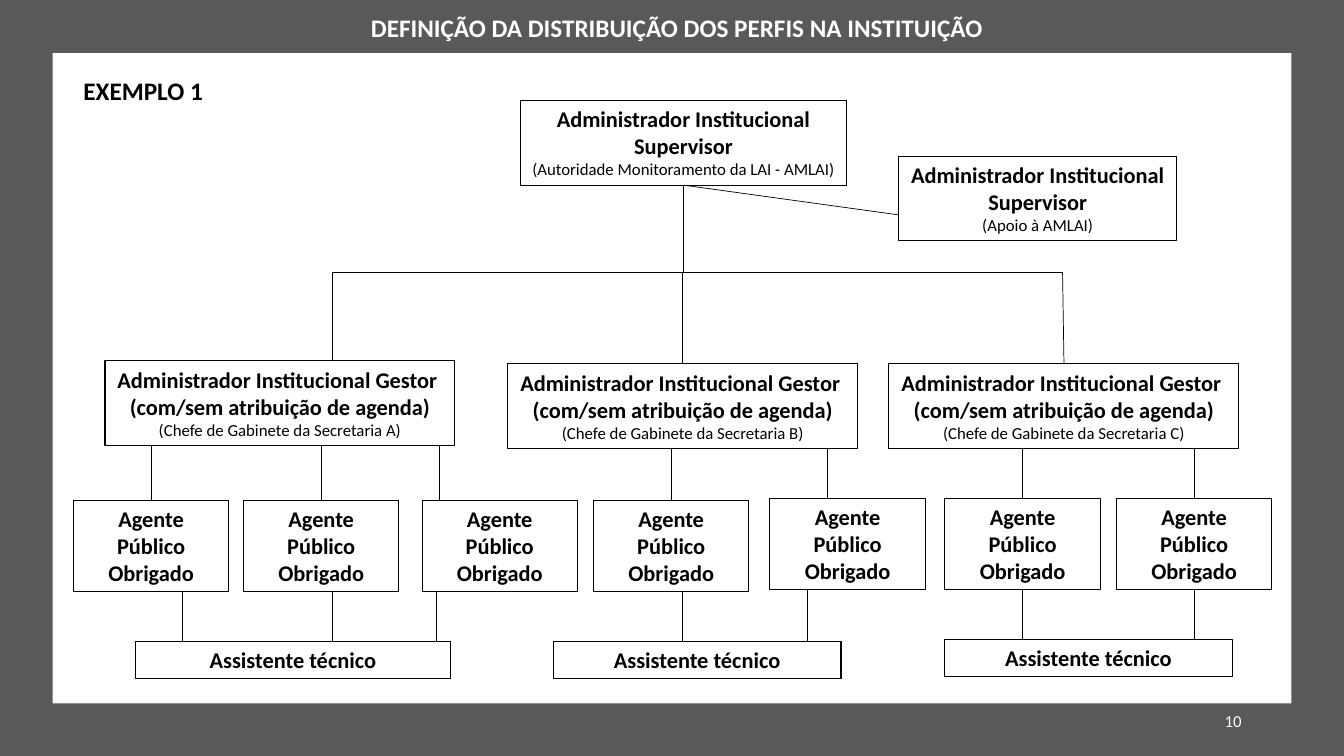
from lxml.etree import SubElement
from pptx import Presentation
from pptx.dml.color import RGBColor
from pptx.enum.shapes import MSO_CONNECTOR, MSO_SHAPE
from pptx.enum.text import MSO_ANCHOR, PP_ALIGN
from pptx.oxml.ns import qn
from pptx.util import Pt

GRAY = RGBColor(0x59, 0x59, 0x59)
WHITE = RGBColor(0xFF, 0xFF, 0xFF)
BLACK = RGBColor(0, 0, 0)

deck = Presentation()
deck.slide_width, deck.slide_height = Pt(960), Pt(540)
slide = deck.slides.add_slide(deck.slide_layouts[5])
shapes = slide.shapes


def write(shape, lines, align, color=BLACK, anchor=MSO_ANCHOR.TOP):
    """Fill a shape with lines given as (text, size, bold)."""
    frame = shape.text_frame
    frame.word_wrap = True
    frame.vertical_anchor = anchor
    for i, (text, size, bold) in enumerate(lines):
        para = frame.add_paragraph() if i else frame.paragraphs[0]
        para.alignment = align
        run = para.add_run()
        run.text = text
        run.font.name = "Calibri"
        run.font.size = Pt(size)
        run.font.bold = bold
        run.font.color.rgb = color


def link(x1, y1, x2, y2, head=None, tail=None):
    """Draw a thin line, joined to a bottom (head) or top (tail) middle."""
    line = shapes.add_connector(MSO_CONNECTOR.STRAIGHT, Pt(x1), Pt(y1), Pt(x2), Pt(y2))
    line.line.color.rgb = BLACK
    line.line.width = Pt(0.5)
    if head is not None:
        line.begin_connect(head, 2)
    if tail is not None:
        line.end_connect(tail, 0)
    SubElement(line._element.spPr, qn("a:effectLst"))


# Background and white panel
slide.background.fill.solid()
slide.background.fill.fore_color.rgb = GRAY
panel = shapes.add_shape(MSO_SHAPE.RECTANGLE, Pt(37.5), Pt(38), Pt(885), Pt(464.5))
panel.shadow.inherit = False
panel.fill.solid()
panel.fill.fore_color.rgb = WHITE
panel.line.fill.background()

# Title, example label and page number
title = shapes.title
title.left, title.top, title.width, title.height = Pt(257.75), Pt(5.25), Pt(460), Pt(29)
write(title, [("DEFINIÇÃO DA DISTRIBUIÇÃO DOS PERFIS NA INSTITUIÇÃO", 18, True)],
      PP_ALIGN.LEFT, WHITE)
title.text_frame.word_wrap = False
label = shapes.add_textbox(Pt(52.5), Pt(50.5), Pt(232.5), Pt(29))
write(label, [("EXEMPLO 1", 18, True)], PP_ALIGN.LEFT)
page = shapes.add_textbox(Pt(678), Pt(500.5), Pt(216), Pt(29))
write(page, [("10", 12, False)], PP_ALIGN.RIGHT, WHITE, MSO_ANCHOR.MIDDLE)
page.text_frame.paragraphs[0].space_after = Pt(6)

# Sizes shared by the boxes of each level
ROLE_H = 60.5
GESTOR_W = 250
AGENT_W, AGENT_H = 111, 65.5
HELP_H = 26.5
BAR = 194.5

# Boxes as (left, top, width, height, lines)
boss = "Administrador Institucional Supervisor"
specs = {
    "head": (372, 71.75, 232.5, ROLE_H,
             [(boss, 16, True), ("(Autoridade Monitoramento da LAI - AMLAI)", 12, False)]),
    "aide": (642, 111.5, 198.5, ROLE_H,
             [(boss, 16, True), ("(Apoio à AMLAI)", 12, False)]),
}

# Branches: gestor left and top, drop x, assistant left, top and width,
# then agents as left, top, line x above, line x below (None = own middle)
branches = {
    "A": (75, 257.75, 237.5, 96.5, 458, 225.5, [
        (52.5, 357.25, None, 130.5),
        (174, 357.25, None, 237.5),
        (301.5, 357.25, 314, 312)]),
    "B": (362.75, 260, None, 395.25, 458, 205.5, [
        (424, 357.25, None, 487.5),
        (550, 355.75, 591.25, 577)]),
    "C": (635, 260, None, 674.75, 456.5, 205.5, [
        (675, 355.75, None, None),
        (797.5, 355.75, None, None)]),
}
for key, (left, top, drop, hleft, htop, hwide, agents) in branches.items():
    specs["gestor", key] = (left, top, GESTOR_W, ROLE_H, [
        ("Administrador Institucional Gestor ", 16, True),
        ("(com/sem atribuição de agenda)", 16, True),
        (f"(Chefe de Gabinete da Secretaria {key})", 12, False)])
    specs["help", key] = (hleft, htop, hwide, HELP_H, [("Assistente técnico", 16, True)])
    for i, (aleft, atop, *ends) in enumerate(agents):
        specs["agent", key, i] = (aleft, atop, AGENT_W, AGENT_H,
                                  [("Agente Público Obrigado", 16, True)])

boxes = {}
for name, (left, top, width, height, lines) in specs.items():
    box = shapes.add_shape(MSO_SHAPE.RECTANGLE, Pt(left), Pt(top), Pt(width), Pt(height))
    box.shadow.inherit = False
    box.fill.background()
    box.line.color.rgb = BLACK
    box.line.width = Pt(0.75)
    write(box, lines, PP_ALIGN.CENTER)
    boxes[name] = box

# Lines from the head: stem, aide and crossbar
mid, base = 488.25, 71.75 + ROLE_H
link(mid, base, mid, BAR, head=boxes["head"])
link(mid, base, 642, 153.5, head=boxes["head"])
link(237.5, BAR, 759, BAR)

# Lines down each branch
for key, (left, top, drop, hleft, htop, hwide, agents) in branches.items():
    gestor = boxes["gestor", key]
    x = drop or left + GESTOR_W / 2
    link(min(x, 759), BAR, x, top, tail=None if drop else gestor)
    for i, (aleft, atop, above, below) in enumerate(agents):
        agent = boxes["agent", key, i]
        own = aleft + AGENT_W / 2
        up, down = above or own, below or own
        link(up, top + ROLE_H, up, atop, tail=None if above else agent)
        link(down, atop + AGENT_H, down, htop, head=None if below else agent)

deck.save("out.pptx")
